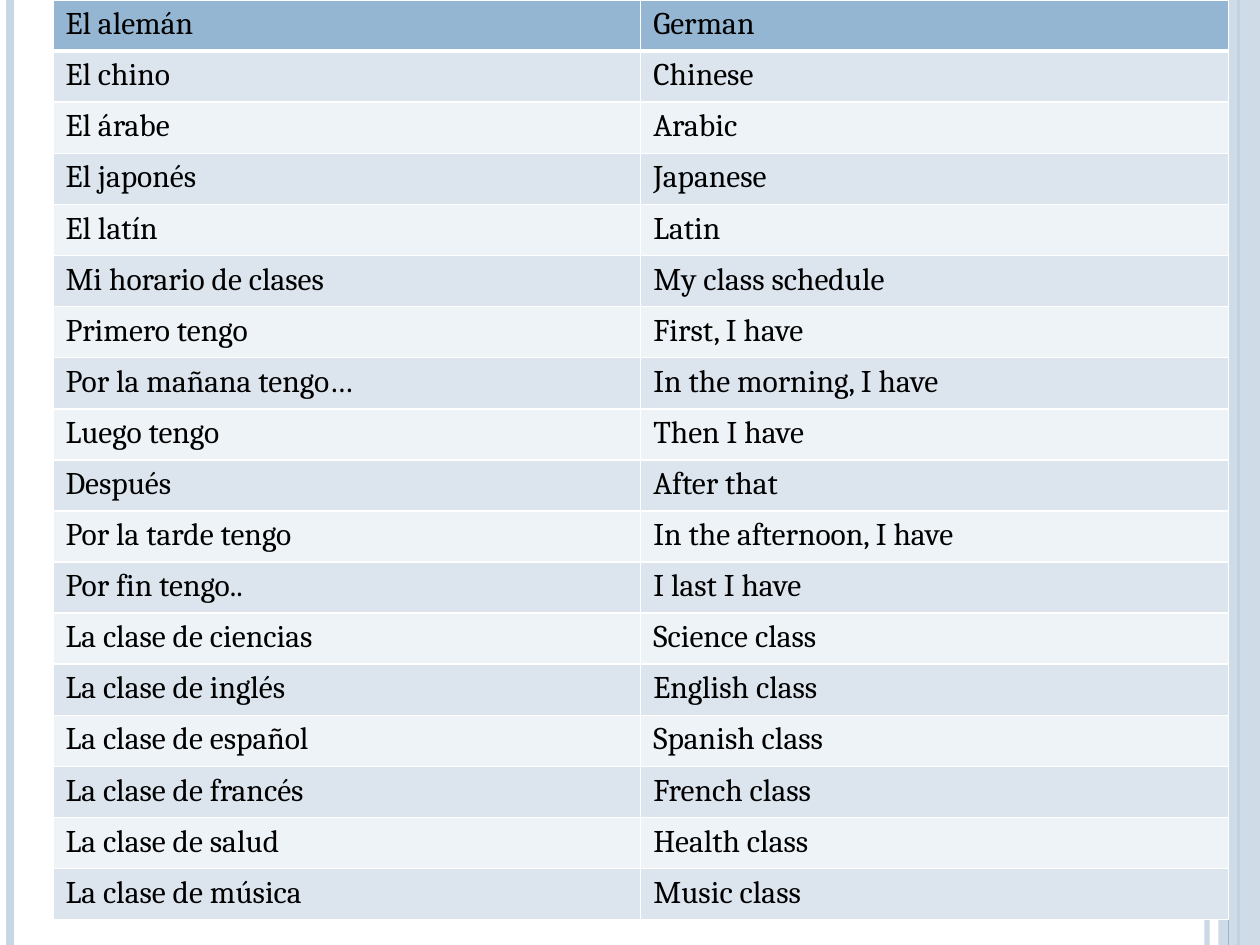
"""Build a Spanish-English vocabulary table slide for school subjects."""
from lxml.etree import SubElement
from pptx import Presentation
from pptx.dml.color import RGBColor as RGB
from pptx.enum.shapes import MSO_CONNECTOR as CONN, MSO_SHAPE as SHAPE
from pptx.oxml import parse_xml
from pptx.oxml.ns import qn
from pptx.util import Inches, Pt

THEME = {
    "band": "C8D7E5", "accent": "94B6D2", "border": "FFFFFF", "text": "000000",
    "rows": ("EEF3F7", "DCE5EE"), "font": "Cambria", "size": 18,
}
NS = "http://schemas.openxmlformats.org/drawingml/2006/main"
WORDS = [
    ("El alemán", "German"),
    ("El chino", "Chinese"),
    ("El árabe", "Arabic"),
    ("El japonés", "Japanese"),
    ("El latín", "Latin"),
    ("Mi horario de clases", "My class schedule"),
    ("Primero tengo", "First, I have"),
    ("Por la mañana tengo…", "In the morning, I have"),
    ("Luego tengo", "Then I have"),
    ("Después", "After that"),
    ("Por la tarde tengo", "In the afternoon, I have"),
    ("Por fin tengo..", "I last I have"),
    ("La clase de ciencias", "Science class"),
    ("La clase de inglés", "English class"),
    ("La clase de español", "Spanish class"),
    ("La clase de francés", "French class"),
    ("La clase de salud", "Health class"),
    ("La clase de música", "Music class"),
]


def set_alpha(element, percent):
    color = next(element.iter(qn("a:srgbClr")))
    SubElement(color, qn("a:alpha")).set("val", str(percent * 1000))


def add_rule(s, x, color, width):
    line = s.shapes.add_connector(CONN.STRAIGHT, Inches(x), 0, Inches(x), Inches(7.5))
    line.line.color.rgb = RGB.from_string(color)
    line.line.width = Pt(width)
    SubElement(line.element.spPr, qn("a:effectLst"))
    return line


prs = Presentation()
prs.slide_width, prs.slide_height = Inches(10), Inches(7.5)
s = prs.slides.add_slide(prs.slide_layouts[6])

inner_rule = add_rule(s, 9.58, THEME["band"], 3)
set_alpha(inner_rule.element.spPr, 93)
add_rule(s, 0.08, THEME["band"], 4.5)
add_rule(s, 9.83, THEME["accent"], 1.5)
band = s.shapes.add_shape(SHAPE.RECTANGLE, Inches(9.67), 0, Inches(0.33), Inches(7.5))
band.shadow.inherit = False
band.fill.solid()
band.fill.fore_color.rgb = RGB.from_string(THEME["band"])
band.line.fill.background()
set_alpha(band.element.spPr, 87)
add_rule(s, 9.75, THEME["accent"], 0.75)

table = s.shapes.add_table(
    len(WORDS), 2, Inches(0.42), 0, Inches(9.33), Inches(7.3)).table
text_format = {
    "name": THEME["font"], "size": Pt(THEME["size"]), "bold": False,
}
for i, pair in enumerate(WORDS):
    fill = THEME["rows"][i % 2] if i else THEME["accent"]
    borders = {"L": 1, "R": 1, "T": 3 if i == 1 else 1, "B": 1 if i else 3}
    for j, word in enumerate(pair):
        cell = table.cell(i, j)
        cell.fill.solid()
        cell.fill.fore_color.rgb = RGB.from_string(fill)
        r = cell.text_frame.paragraphs[0].add_run()
        r.text = word
        for key, value in text_format.items():
            setattr(r.font, key, value)
        r.font.color.rgb = RGB.from_string(THEME["text"])
        tc_pr = cell._tc.get_or_add_tcPr()
        for k, (side, width) in enumerate(borders.items()):
            tc_pr.insert(k, parse_xml(
                f'<a:ln{side} xmlns:a="{NS}" w="{Pt(width)}"><a:solidFill>'
                f'<a:srgbClr val="{THEME["border"]}"/></a:solidFill></a:ln{side}>'))

prs.save("out.pptx")
